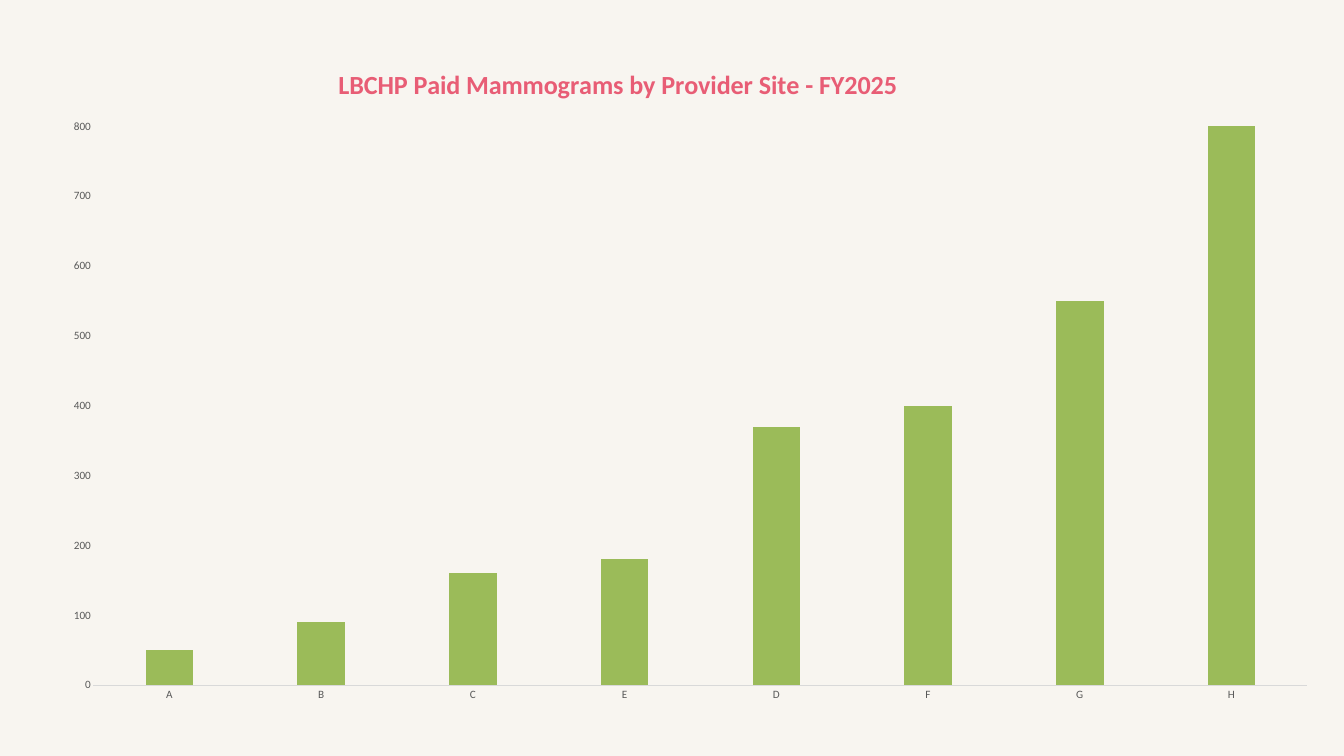
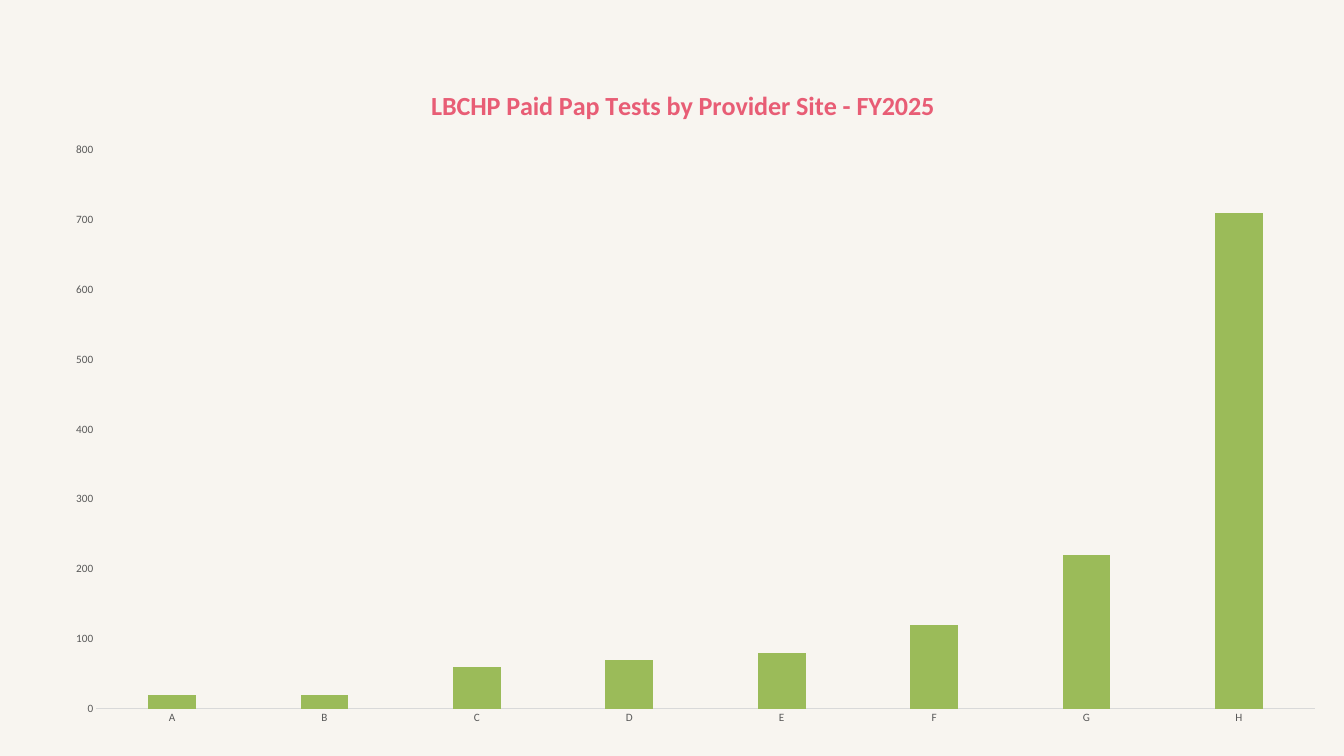
"""Builds two column charts of paid screenings by provider site."""
from pptx import Presentation
from pptx.chart.data import CategoryChartData
from pptx.dml.color import RGBColor
from pptx.enum.chart import XL_CHART_TYPE as CT, XL_TICK_MARK as TM
from pptx.oxml import parse_xml
from pptx.oxml.ns import nsdecls, qn
from pptx.util import Pt

FONT = "Calibri"
BACKGROUND, PINK, GREEN = "F8F5F0", "E85D75", "9BBB59"
BLACK, GREY, RULE = "000000", "595959", "D9D9D9"
CHART_W, CHART_H = Pt(1362.24), Pt(725.76)


def rgb(color):
    """Turn a hex string into a colour."""
    return RGBColor.from_string(color)


def style(font, size, color, bold=False):
    """Set the face, size, colour and weight of a font."""
    font.name, font.size, font.bold = FONT, Pt(size), bold
    font.color.rgb = rgb(color)


def add_text(p, text, **fmt):
    """Add a formatted run to a paragraph."""
    r = p.add_run()
    r.text = text
    style(r.font, **fmt)


def set_layout(parent, before, inner=False, **edges):
    """Place a chart part by percentages of the chart area."""
    for old in parent.findall(qn("c:layout")):
        parent.remove(old)
    tags = ['<c:layoutTarget val="inner"/>'] if inner else []
    tags += [f'<c:{k}Mode val="edge"/>' for k in "xy"]
    tags += [f'<c:{k} val="{v / 100:.3f}"/>' for k, v in edges.items()]
    parent.find(qn(before)).addprevious(parse_xml(
        f'<c:layout {nsdecls("c")}><c:manualLayout>{"".join(tags)}'
        '</c:manualLayout></c:layout>'))


def style_axis(axis):
    """Format the labels of an axis and drop its ticks and gridlines."""
    axis.has_major_gridlines = False
    axis.major_tick_mark = axis.minor_tick_mark = TM.NONE
    style(axis.tick_labels.font, 12, GREY)


def add_title(chart, text, x, y):
    """Give the chart a title at the given place."""
    title = chart.chart_title
    add_text(title.text_frame.paragraphs[0], text, size=28, color=PINK, bold=True)
    title.include_in_layout = False
    set_layout(title._element, "c:overlay", x=x, y=y)


def add_column_chart(s, title, sites, counts, at, title_at, plot, top=None):
    """Add a column chart of counts by provider site."""
    data = CategoryChartData()
    data.categories = sites
    data.add_series("Series 1", counts)
    left, upper = at
    chart = s.shapes.add_chart(CT.COLUMN_CLUSTERED, Pt(left), Pt(upper),
                               CHART_W, CHART_H, data).chart
    style(chart.font, 10, BLACK)
    chart.has_legend = False
    add_title(chart, title, *title_at)
    bars = chart.plots[0]
    bars.gap_width, bars.overlap, bars.vary_by_categories = 219, -27, False
    fill = bars.series[0].format.fill
    fill.solid()
    fill.fore_color.rgb = rgb(GREEN)
    for axis in (chart.category_axis, chart.value_axis):
        style_axis(axis)
    line = chart.category_axis.format.line
    line.color.rgb, line.width = rgb(RULE), Pt(0.75)
    chart.value_axis.format.line.fill.background()
    if top:
        chart.value_axis.maximum_scale = top
    set_layout(bars._element.getparent(), "c:barChart", inner=True,
               **dict(zip("xywh", plot)))


def main():
    """Build and save the presentation."""
    prs = Presentation()
    prs.slide_width, prs.slide_height = Pt(1440), Pt(810)
    fill = prs.slide_master.background.fill
    fill.solid()
    fill.fore_color.rgb = rgb(BACKGROUND)
    blank = prs.slide_layouts[6]
    add_column_chart(
        prs.slides.add_slide(blank), "LBCHP Paid Mammograms by Provider Site - FY2025",
        "ABCEDFGH", (50, 90, 160, 180, 370, 400, 550, 1210),
        at=(38.88, 51.12), title_at=(23.4, 2.2),
        plot=(4.5, 11.6, 95.5, 82.5), top=800)
    add_column_chart(
        prs.slides.add_slide(blank), "LBCHP Paid Pap Tests by Provider Site - FY2025",
        "ABCDEFGH", (20, 20, 60, 70, 80, 120, 220, 710),
        at=(48.24, 63.36), title_at=(30, 3.5),
        plot=(4, 13.4, 95.9, 82.5))
    prs.save("out.pptx")


if __name__ == "__main__":
    main()
